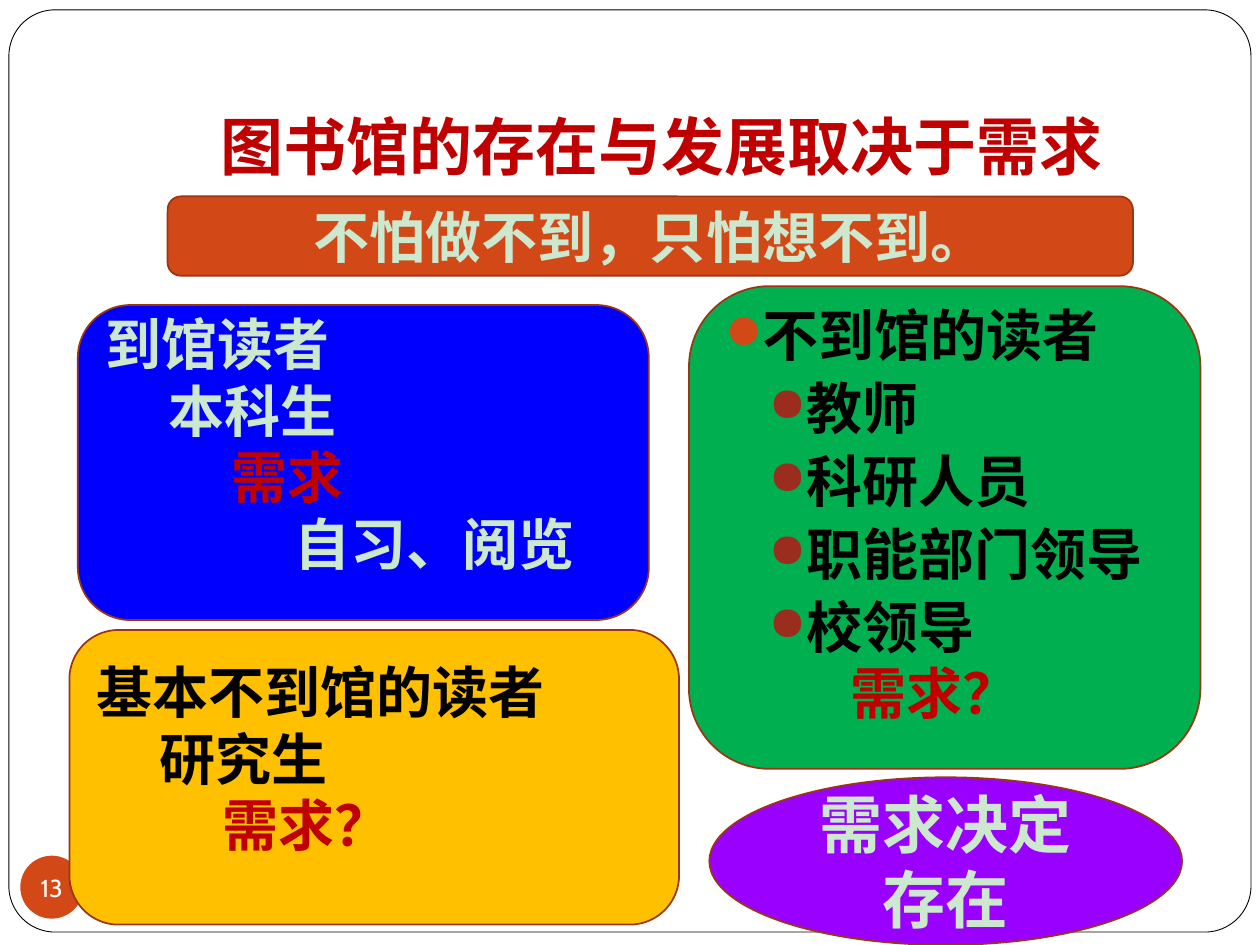
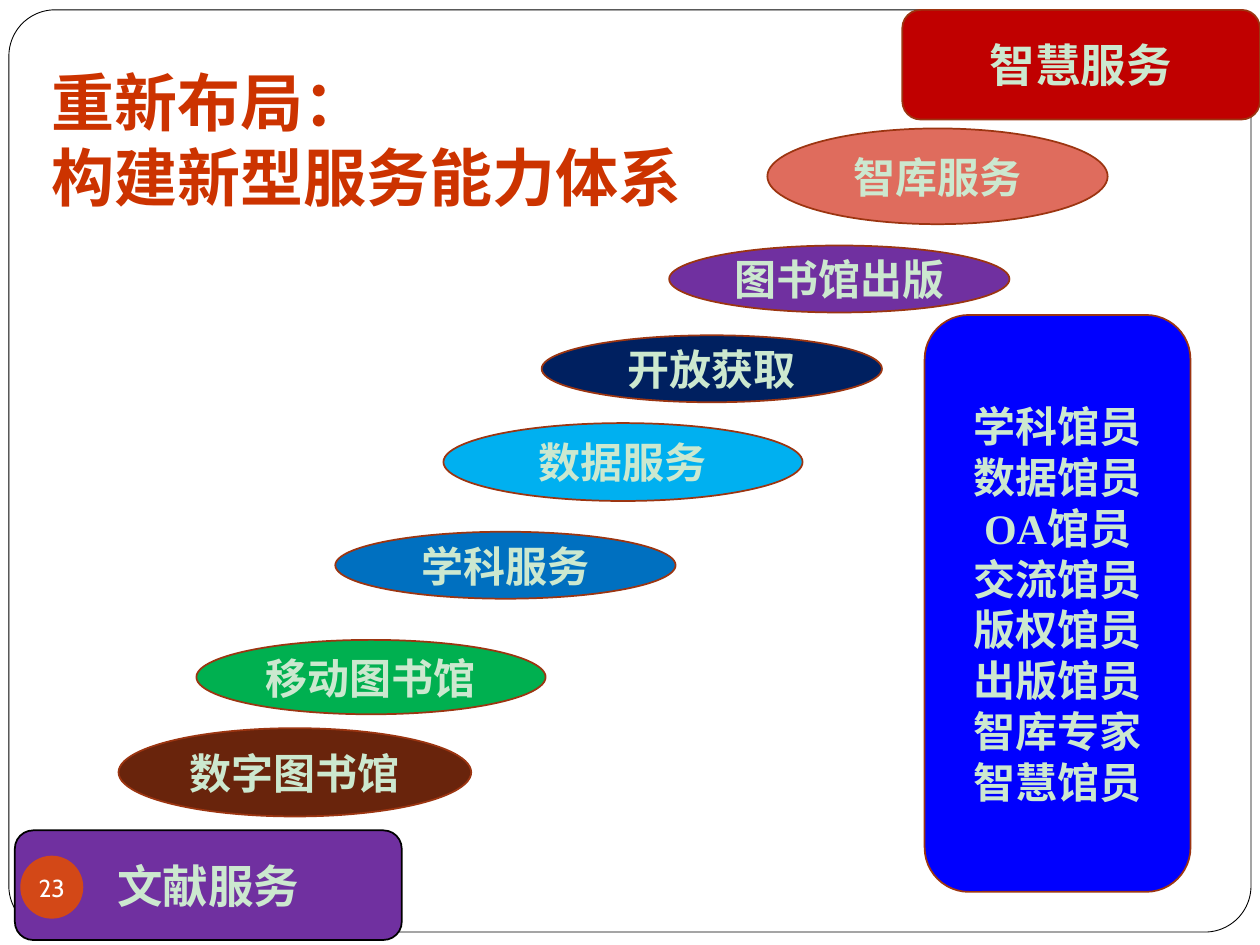
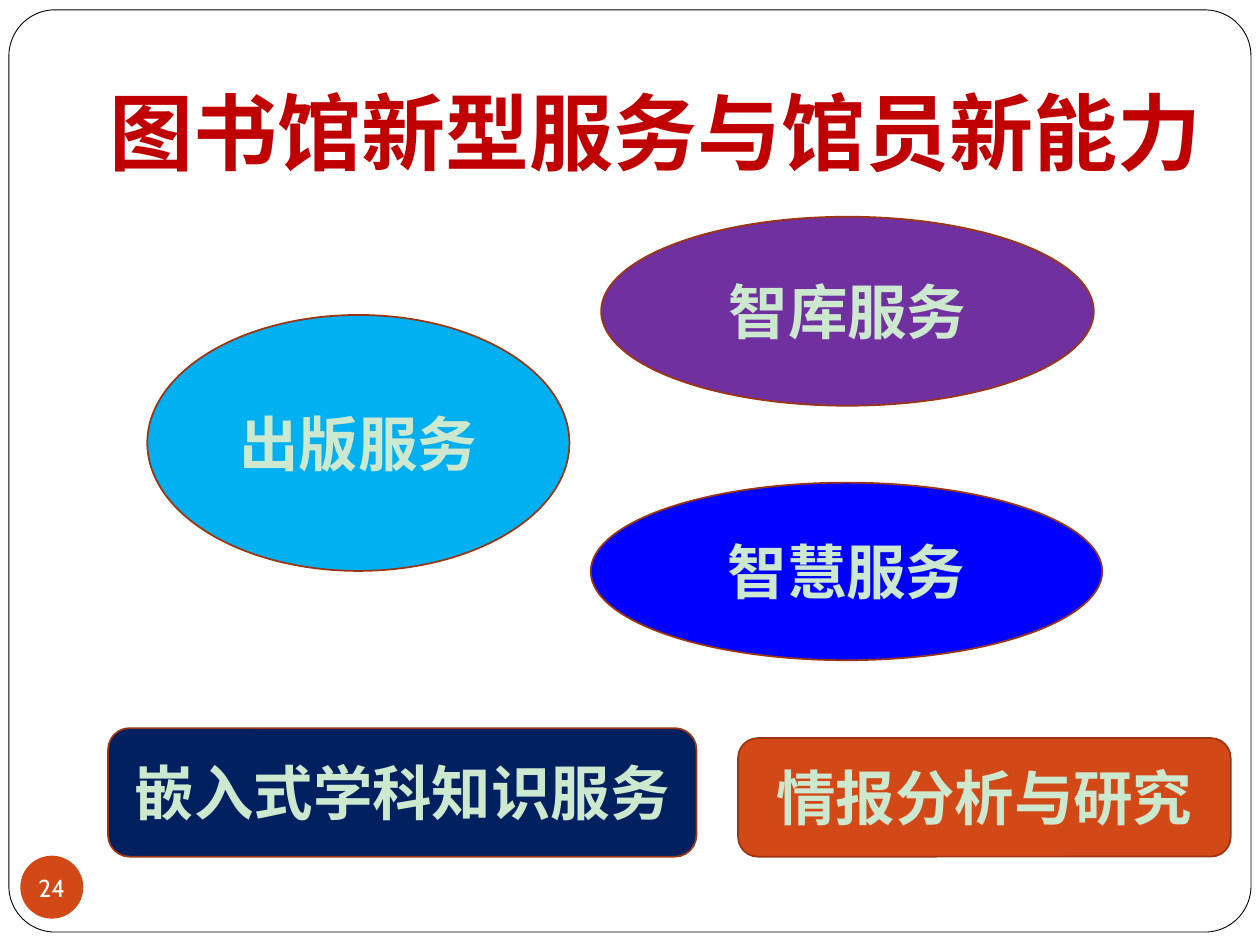
"""Builds three slides on library needs, new services and librarian abilities."""
from typing import NamedTuple

import pptx
import pptx.dml.color
import pptx.enum.shapes
import pptx.enum.text
import pptx.oxml
import pptx.oxml.ns
import pptx.util

Cm = pptx.util.Cm
Pt = pptx.util.Pt
ALIGN = pptx.enum.text.PP_ALIGN
ANCHOR = pptx.enum.text.MSO_ANCHOR
SHAPES = pptx.enum.shapes.MSO_SHAPE
ROUND, OVAL = SHAPES.ROUNDED_RECTANGLE, SHAPES.OVAL

SERIF, SANS, TITLE_FONT, ARIAL = "Times New Roman", "Noto Sans CJK SC", "Cabin", "Arial"
EAST_ASIAN = SANS
LINE_RATIO = 1.19

BLACK, WHITE, PALE = "000000", "FFFFFF", "CCE8CF"
RED, ORANGE, RUST, BRICK = "C00000", "D34817", "9C3511", "9B2D1F"
BLUE, NAVY, SKY, PURPLE, GREEN = "0000FF", "002060", "00B0F0", "7030A0", "00B050"

INSETS = (0.25, 0.13, 0.25, 0.13)
TITLE_INSETS = (0.25, 0.13, 0.25, 0.25)
RAISED_INSETS = (0.25, 0.13, 0.25, 0.89)
READER_INSETS = (0.25, 0.33, 0.25, 0.89)
FRAME_BOX = (0.18, 0.2, 25.04, 18.59)
BADGE_BOX = (0.41, 17.25, 1.27, 1.27)


class Line(NamedTuple):
    """One paragraph with its indent in centimetres and optional bullet."""
    text: str
    color: str = PALE
    indent: float = 0
    hanging: float = 0
    bullet: str = ""
    before: float = 0
    font: str = SANS


class Panel(NamedTuple):
    """One filled shape with its text."""
    kind: int
    box: tuple
    fill: str
    lines: list
    size: int
    font: str = SERIF
    align: int = ALIGN.CENTER
    insets: tuple = INSETS
    outline: str = RUST


class Title(NamedTuple):
    """The heading of a slide."""
    text: str
    box: tuple
    size: int = 36
    color: str = RED
    font: str = TITLE_FONT
    align: int = ALIGN.CENTER
    anchor: int = ANCHOR.BOTTOM


READER_GROUPS = ["教师", "科研人员", "职能部门领导", "校领导"]
ABSENT_READERS = [
    Line("不到馆的读者", BLACK, 0.76, 0.76, ORANGE, font=SERIF),
    *(Line(group, BLACK, 1.52, 0.64, BRICK, 3.7) for group in READER_GROUPS),
    Line("需求？", RED, 2.54),
]
VISITORS = [
    Line("到馆读者", font=SERIF),
    Line("本科生", indent=1.27),
    Line("需求", RED, 2.54),
    Line("自习、阅览", indent=3.81),
]
RARE_VISITORS = [
    Line("基本不到馆的读者", BLACK, font=SERIF),
    Line("研究生", BLACK, 1.27),
    Line("需求？", RED, 2.54),
]
LIBRARIANS = ["学科馆员", "数据馆员", "OA馆员", "交流馆员",
              "版权馆员", "出版馆员", "智库专家", "智慧馆员"]
SERVICE_STEPS = [
    ("移动图书馆", (3.96, 12.9, 7.04, 1.5), GREEN),
    ("数据服务", (8.94, 8.53, 7.24, 1.57), SKY),
    ("学科服务", (6.76, 10.72, 6.86, 1.35), "0070C0"),
    ("智库服务", (15.47, 2.59, 6.86, 1.93), "DF6C5D"),
    ("数字图书馆", (2.39, 14.68, 7.11, 1.78), "69240C"),
    ("开放获取", (10.92, 6.76, 6.86, 1.35), NAVY),
    ("图书馆出版", (13.49, 4.95, 6.86, 1.35), PURPLE),
]
NEW_SERVICES = [
    (OVAL, "智库服务", (12.12, 4.37, 9.93, 3.81), PURPLE),
    (OVAL, "出版服务", (2.97, 6.35, 8.51, 5.16), SKY),
    (ROUND, "嵌入式学科知识服务", (2.18, 14.68, 11.86, 2.59), NAVY),
    (OVAL, "智慧服务", (11.91, 9.73, 10.31, 3.58), BLUE),
    (ROUND, "情报分析与研究", (14.88, 14.88, 9.93, 2.39), ORANGE),
]

SLIDES = [
    {
        "number": "13",
        "badge_on_top": False,
        "title": Title("图书馆的存在与发展取决于需求", (2.54, 0.76, 21.59, 3.18)),
        "panels": [
            Panel(ROUND, (13.89, 5.77, 10.31, 9.73), GREEN, ABSENT_READERS, 32,
                  align=ALIGN.LEFT, insets=READER_INSETS),
            Panel(ROUND, (1.57, 6.15, 11.51, 6.35), BLUE, VISITORS, 32,
                  align=ALIGN.LEFT, insets=RAISED_INSETS),
            Panel(ROUND, (1.4, 12.7, 12.29, 5.94), "FFC000", RARE_VISITORS, 32,
                  align=ALIGN.LEFT, insets=RAISED_INSETS),
            Panel(OVAL, (14.3, 15.67, 9.53, 3.38), "9900FF",
                  [Line("需求决定存在", font=ARIAL)], 36),
            Panel(ROUND, (3.38, 3.96, 19.46, 1.6), ORANGE,
                  [Line("不怕做不到，只怕想不到。", font=SERIF)], 32),
        ],
    },
    {
        "number": "23",
        "badge_on_top": True,
        "title": Title("重新布局：\v构建新型服务能力体系", (0.79, 2.39, 17.42, 2.18),
                       color="CC3300", align=ALIGN.LEFT),
        "panels": [
            Panel(ROUND, (0.3, 16.74, 7.8, 2.21), PURPLE,
                  [Line("文献服务", font=SERIF)], 26, outline=BLACK),
            Panel(ROUND, (18.19, 0.2, 7.21, 2.21), RED, [Line("智慧服务", font=SERIF)], 26),
            *(Panel(OVAL, box, fill, [Line(name)], 24) for name, box, fill in SERVICE_STEPS),
            Panel(ROUND, (18.64, 6.35, 5.36, 11.63), BLUE,
                  [Line(name, font=SERIF) for name in LIBRARIANS], 24),
        ],
    },
    {
        "number": "24",
        "badge_on_top": True,
        "title": Title("图书馆新型服务与馆员新能力", (1.4, 1.52, 23.62, 4.19), 48,
                       font=SERIF, anchor=ANCHOR.TOP),
        "panels": [Panel(kind, box, fill, [Line(name, font=SERIF)], 34)
                   for kind, name, box, fill in NEW_SERVICES],
    },
]


def rgb(color):
    return pptx.dml.color.RGBColor.from_string(color)


def place(shape, box):
    shape.left, shape.top, shape.width, shape.height = map(Cm, box)


def set_frame(text_frame, insets, anchor, wrap=True):
    text_frame.auto_size = pptx.enum.text.MSO_AUTO_SIZE.NONE
    text_frame.word_wrap = wrap
    text_frame.vertical_anchor = anchor
    (text_frame.margin_left, text_frame.margin_top,
     text_frame.margin_right, text_frame.margin_bottom) = map(Cm, insets)


def format_paragraph(paragraph, align, size, color, font, bold=True):
    paragraph.alignment = align
    paragraph.line_spacing = Pt(round(size * LINE_RATIO))
    for run in paragraph.runs:
        run.font.size = Pt(size)
        run.font.bold = bold
        run.font.color.rgb = rgb(color)
        run.font.name = font
        east_asian = pptx.oxml.parse_xml(
            f'<a:ea {pptx.oxml.ns.nsdecls("a")} typeface="{EAST_ASIAN}"/>')
        run.font._element.append(east_asian)


def indent_paragraph(paragraph, line):
    properties = paragraph._p.get_or_add_pPr()
    properties.set("marL", str(Cm(line.indent)))
    properties.set("indent", str(-Cm(line.hanging)))
    if line.bullet:
        for tag in (f'buClr {{}}><a:srgbClr val="{line.bullet}"/></a:buClr',
                    'buSzPct {} val="85000"/', 'buChar {} char="●"/'):
            markup = tag.format(pptx.oxml.ns.nsdecls("a"))
            properties.append(pptx.oxml.parse_xml(f"<a:{markup}>"))


def add_shape(slide, kind, box, fill=None, outline=None, weight=1):
    shape = slide.shapes.add_shape(kind, *map(Cm, box))
    shape.shadow.inherit = False
    if fill:
        shape.fill.solid()
        shape.fill.fore_color.rgb = rgb(fill)
    else:
        shape.fill.background()
    if outline:
        shape.line.color.rgb = rgb(outline)
        shape.line.width = Pt(weight)
    else:
        shape.line.fill.background()
    return shape


def add_panel(slide, panel):
    shape = add_shape(slide, panel.kind, panel.box, panel.fill, panel.outline)
    text_frame = shape.text_frame
    set_frame(text_frame, panel.insets, ANCHOR.MIDDLE)
    text_frame.text = "\n".join(line.text for line in panel.lines)
    for paragraph, line in zip(text_frame.paragraphs, panel.lines):
        indent_paragraph(paragraph, line)
        paragraph.space_before = Pt(line.before)
        format_paragraph(paragraph, panel.align, panel.size, line.color, line.font)


def add_badge(slide, number):
    shape = add_shape(slide, OVAL, BADGE_BOX, ORANGE)
    set_frame(shape.text_frame, (0, 0, 0, 0), ANCHOR.MIDDLE, wrap=False)
    shape.text_frame.text = number
    format_paragraph(shape.text_frame.paragraphs[0], ALIGN.CENTER, 14, WHITE,
                     TITLE_FONT, bold=False)


def set_title(slide, title):
    shape = slide.shapes.title
    place(shape, title.box)
    set_frame(shape.text_frame, TITLE_INSETS, title.anchor)
    shape.text_frame.text = title.text
    format_paragraph(shape.text_frame.paragraphs[0], title.align, title.size,
                     title.color, title.font)


def add_slide(presentation, content):
    slide = presentation.slides.add_slide(presentation.slide_layouts[5])
    slide.background.fill.solid()
    slide.background.fill.fore_color.rgb = rgb(WHITE)
    frame = add_shape(slide, ROUND, FRAME_BOX, outline=BLACK, weight=0.5)
    frame.adjustments[0] = 0.05
    set_title(slide, content["title"])
    if not content["badge_on_top"]:
        add_badge(slide, content["number"])
    for panel in content["panels"]:
        add_panel(slide, panel)
    if content["badge_on_top"]:
        add_badge(slide, content["number"])


def main():
    presentation = pptx.Presentation()
    presentation.slide_width, presentation.slide_height = Cm(25.4), Cm(19.05)
    for content in SLIDES:
        add_slide(presentation, content)
    presentation.save("out.pptx")


if __name__ == "__main__":
    main()
